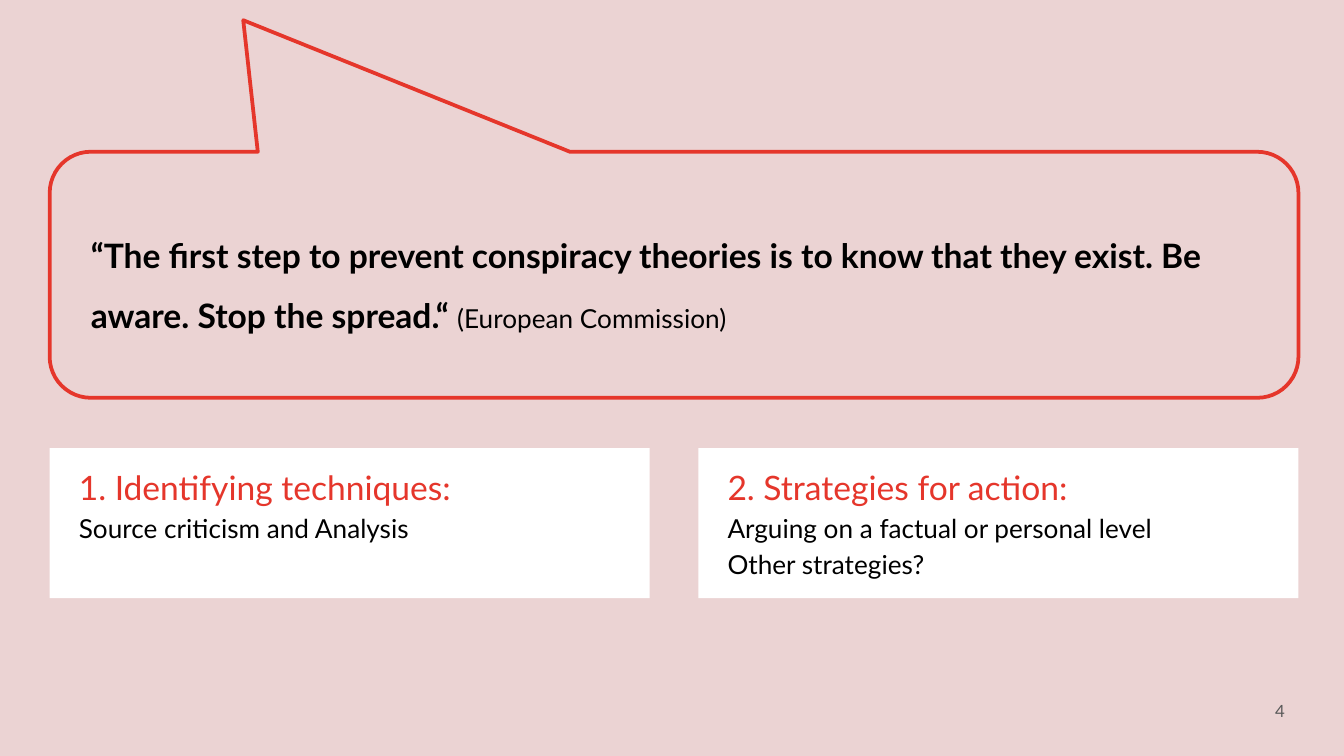
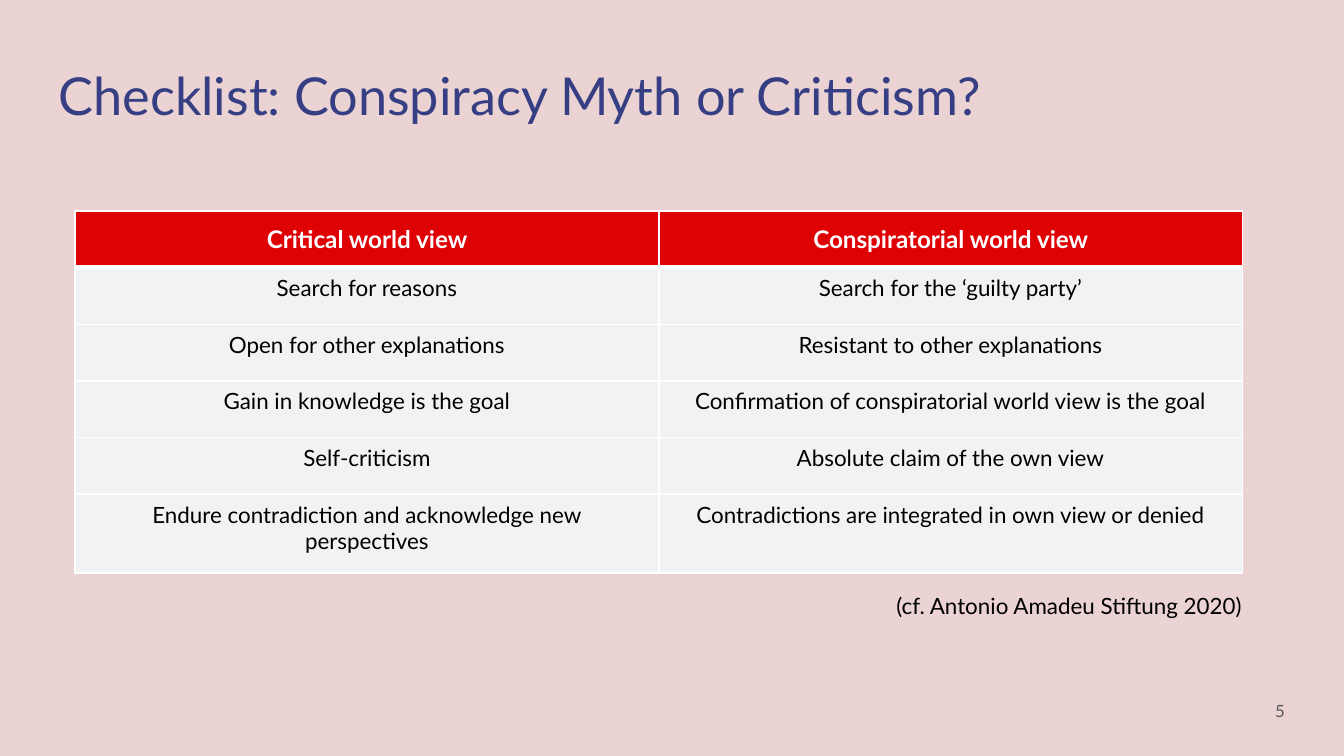
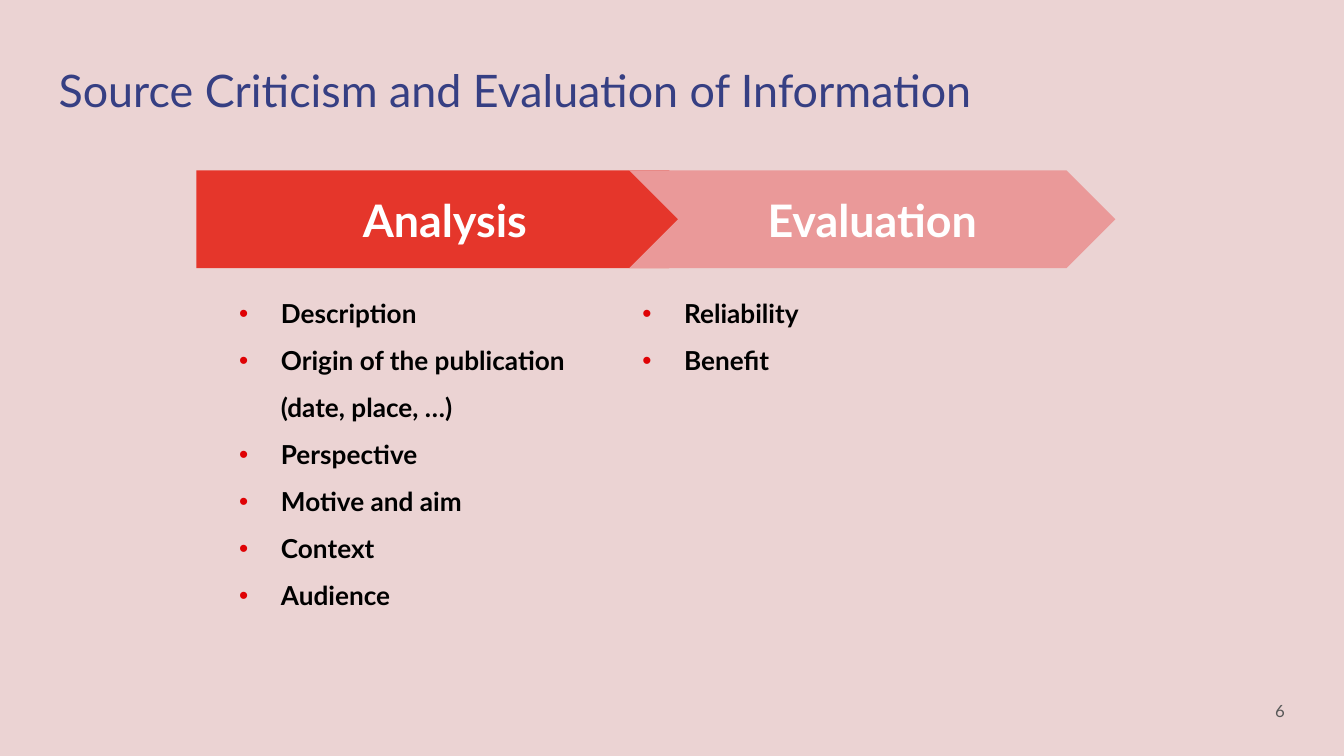
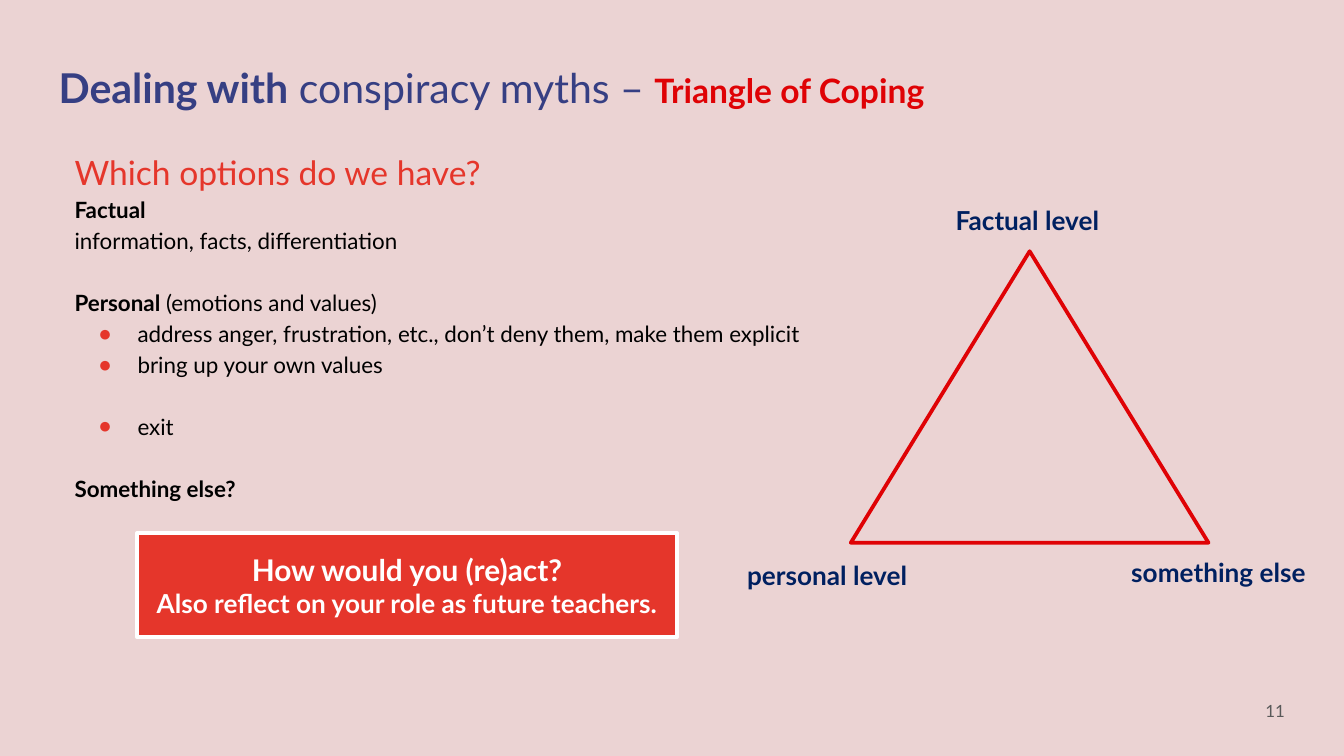
from lxml import etree
from pptx import Presentation
from pptx.dml.color import RGBColor
from pptx.enum.shapes import MSO_SHAPE as SHAPE
from pptx.enum.text import MSO_ANCHOR as ANCHOR, PP_ALIGN as ALIGN
from pptx.oxml import parse_xml
from pptx.oxml.ns import nsdecls, qn
from pptx.util import Cm, Pt

FONT = "Lato"
ROSE = RGBColor(0xEB, 0xD3, 0xD3)
CORAL = RGBColor(0xE5, 0x36, 0x2B)
RED = RGBColor(0xDF, 0x02, 0x05)
PINK = RGBColor(0xEA, 0x99, 0x99)
BLUE = RGBColor(0x36, 0x3F, 0x83)
NAVY = RGBColor(0x00, 0x20, 0x60)
GREY = RGBColor(0x59, 0x59, 0x59)
LIGHT = RGBColor(0xF2, 0xF2, 0xF2)
BLACK = RGBColor(0, 0, 0)
WHITE = RGBColor(0xFF, 0xFF, 0xFF)


def add_block(s, kind, x, y, w, h, paras=(), fill=None, line=None, anchor=ANCHOR.TOP,
              align=ALIGN.LEFT, spacing=None, left=0, pad=0.25, wrap=True):
    box = Cm(x), Cm(y), Cm(w), Cm(h)
    if kind is None:
        sp = s.shapes.add_textbox(*box)
    else:
        sp = s.shapes.add_shape(kind, *box)
        sp.shadow.inherit = False
        if fill is None:
            sp.fill.background()
        else:
            sp.fill.solid()
            sp.fill.fore_color.rgb = fill
        if line is None:
            sp.line.fill.background()
        else:
            sp.line.color.rgb = line
            sp.line.width = Pt(2)
    tf = sp.text_frame
    tf.word_wrap = wrap
    tf.vertical_anchor = anchor
    tf.margin_left = tf.margin_right = Cm(0.25)
    tf.margin_top = tf.margin_bottom = Cm(pad)
    for i, runs in enumerate(paras):
        p = tf.add_paragraph() if i else tf.paragraphs[0]
        p.alignment = align
        if spacing:
            p.line_spacing = spacing
        if left:
            p._p.get_or_add_pPr().set("marL", str(Cm(left)))
        for text, size, color, bold in runs:
            r = p.add_run()
            r.text = text
            r.font.name = FONT
            r.font.size = Pt(size)
            r.font.color.rgb = color
            r.font.bold = bold
    return sp


def add_bullet(p, char, color, left, hang):
    pPr = p._p.get_or_add_pPr()
    pPr.set("marL", str(Cm(left)))
    pPr.set("indent", str(-Cm(hang)))
    clr = etree.SubElement(pPr, qn("a:buClr"))
    etree.SubElement(clr, qn("a:srgbClr")).set("val", str(color))
    etree.SubElement(pPr, qn("a:buFont")).set("typeface", "Arial")
    etree.SubElement(pPr, qn("a:buChar")).set("char", char)


prs = Presentation()
prs.slide_width = Cm(25.4)
prs.slide_height = Cm(14.29)

pages = [
    ("4", []),
    ("5", [("Checklist: Conspiracy Myth or Criticism?", 28, BLUE, False)]),
    ("6", [("Source Criticism and Evaluation of Information", 24, BLUE, False)]),
    ("11", [("Dealing with", 22, BLUE, True),
            (" conspiracy myths – ", 22, BLUE, False),
            ("Triangle of Coping", 18, RED, True)]),
]
for number, title in pages:
    s = prs.slides.add_slide(prs.slide_layouts[6])
    s.background.fill.solid()
    s.background.fill.fore_color.rgb = ROSE
    if title:
        add_block(s, None, 0.86, 0.94, 18.9, 1.6, [title])
    add_block(s, None, 23.01, 12.9, 1.52, 1.09, [[(number, 9, GREY, False)]],
              anchor=ANCHOR.MIDDLE, align=ALIGN.RIGHT)
quote, checklist, criticism, coping = prs.slides

sp = add_block(quote, SHAPE.ROUNDED_RECTANGULAR_CALLOUT, 0.94, 2.87, 23.6, 4.65,
               [[("“The first step to prevent conspiracy theories is to know that they exist. "
                  "Be aware. Stop the spread.“ ", 18, BLACK, True),
                 ("(European Commission)", 14, BLACK, False)]],
               line=CORAL, anchor=ANCHOR.MIDDLE, spacing=1.5, left=0.3, pad=0.13)
for i, value in enumerate((-0.345, -1.035, 0.167)):
    sp.adjustments[i] = value
sp.text_frame.paragraphs[0].space_after = Pt(12)

cards = [
    ("1. Identifying techniques:", ["Source criticism and Analysis"]),
    ("2. Strategies for action:", ["Arguing on a factual or personal level", "Other strategies?"]),
]
for i, (head, lines) in enumerate(cards):
    paras = [[(head, 18, CORAL, False)]] + [[(t, 14, BLACK, False)] for t in lines]
    add_block(quote, SHAPE.RECTANGLE, 0.94 + i * 12.26, 8.47, 11.34, 2.84, paras,
              fill=WHITE, spacing=1.15, left=0.3)

rows = [
    ("Critical world view", "Conspiratorial world view"),
    ("Search for reasons", "Search for the ‘guilty party’"),
    ("Open for other explanations", "Resistant to other explanations"),
    ("Gain in knowledge is the goal", "Confirmation of conspiratorial world view is the goal"),
    ("Self-criticism", "Absolute claim of the own view"),
    ("Endure contradiction and acknowledge new perspectives",
     "Contradictions are integrated in own view or denied"),
]
table = checklist.shapes.add_table(len(rows), 2, Cm(1.42), Cm(3.99), Cm(22.06), Cm(6.83)).table
for col in table.columns:
    col.width = Cm(11.03)
for i, texts in enumerate(rows):
    table.rows[i].height = Cm(1.49 if i == len(rows) - 1 else 1.07)
    for j, text in enumerate(texts):
        cell = table.cell(i, j)
        cell.fill.solid()
        cell.fill.fore_color.rgb = LIGHT if i else RED
        cell.vertical_anchor = ANCHOR.TOP if i else ANCHOR.MIDDLE
        p = cell.text_frame.paragraphs[0]
        p.text = text
        p.alignment = ALIGN.CENTER
        font = p.runs[0].font
        font.name = FONT
        font.size = Pt(12 if i else 13)
        font.bold = i == 0
        font.color.rgb = BLACK if i else WHITE
        tcPr = cell._tc.get_or_add_tcPr()
        for k, side in enumerate("LRTB"):
            width = Pt(3 if (i, side) in ((0, "B"), (1, "T")) else 1)
            tcPr.insert(k, parse_xml(
                f'<a:ln{side} {nsdecls("a")} w="{width}"><a:solidFill>'
                f'<a:srgbClr val="{WHITE}"/></a:solidFill></a:ln{side}>'))
add_block(checklist, None, 16.69, 11.07, 7.09, 0.76,
          [[("(cf. Antonio Amadeu Stiftung 2020)", 12, BLACK, False)]], pad=0.13, wrap=False)

steps = [
    (SHAPE.PENTAGON, 3.71, 9.86, CORAL, "Analysis", 4.27, 7.59,
     ["Description", "Origin of the publication (date, place, …)", "Perspective",
      "Motive and aim", "Context", "Audience"]),
    (SHAPE.CHEVRON, 11.89, 9.19, PINK, "Evaluation", 11.89, 8.33, ["Reliability", "Benefit"]),
]
for kind, x, w, fill, head, list_x, list_w, items in steps:
    add_block(criticism, kind, x, 3.22, w, 1.85, [[(head, 24, WHITE, True)]],
              fill=fill, anchor=ANCHOR.MIDDLE, align=ALIGN.CENTER)
    sp = add_block(criticism, None, list_x, 5.08, list_w, 7.3,
                   [[(t, 14, BLACK, True)] for t in items], spacing=1.5)
    for p in sp.text_frame.paragraphs:
        add_bullet(p, "•", RED, 0.79, 0.79)

options = [
    [("Which options do we have?", 18, CORAL, False)],
    [("Factual", 12, BLACK, True)],
    [("information, facts, differentiation", 12, BLACK, False)],
    [("Personal", 12, BLACK, True), (" (emotions and values)", 12, BLACK, False)],
    [("address anger, frustration, etc., don’t deny them, make them explicit", 12, BLACK, False)],
    [("bring up your own values", 12, BLACK, False)],
    [("exit", 12, BLACK, False)],
    [("Something else?", 12, BLACK, True)],
]
sp = add_block(coping, None, 0.86, 2.51, 14.63, 7.14, options, spacing=1.15, left=0.3)
paragraphs = sp.text_frame.paragraphs
for i in (3, 6, 7):
    paragraphs[i].space_before = Pt(16.6)
for p in paragraphs[4:7]:
    add_bullet(p, "●", CORAL, 1.49, 0.74)

add_block(coping, SHAPE.ISOSCELES_TRIANGLE, 16.08, 4.75, 6.76, 5.51, line=RED)
for text, x, y, w in [("Factual level", 17.81, 3.73, 3.35),
                      ("personal level", 13.87, 10.44, 3.61),
                      ("something else", 21.13, 10.39, 3.86)]:
    add_block(coping, None, x, y, w, 0.86, [[(text, 14, NAVY, True)]], pad=0.13, wrap=False)

add_block(coping, SHAPE.RECTANGLE, 2.59, 10.08, 10.21, 1.96,
          [[("How would you (re)act?", 16, WHITE, True)],
           [("Also reflect on your role as future teachers.", 14, WHITE, True)]],
          fill=CORAL, line=WHITE, anchor=ANCHOR.MIDDLE, align=ALIGN.CENTER, pad=0.13)

prs.save("out.pptx")
